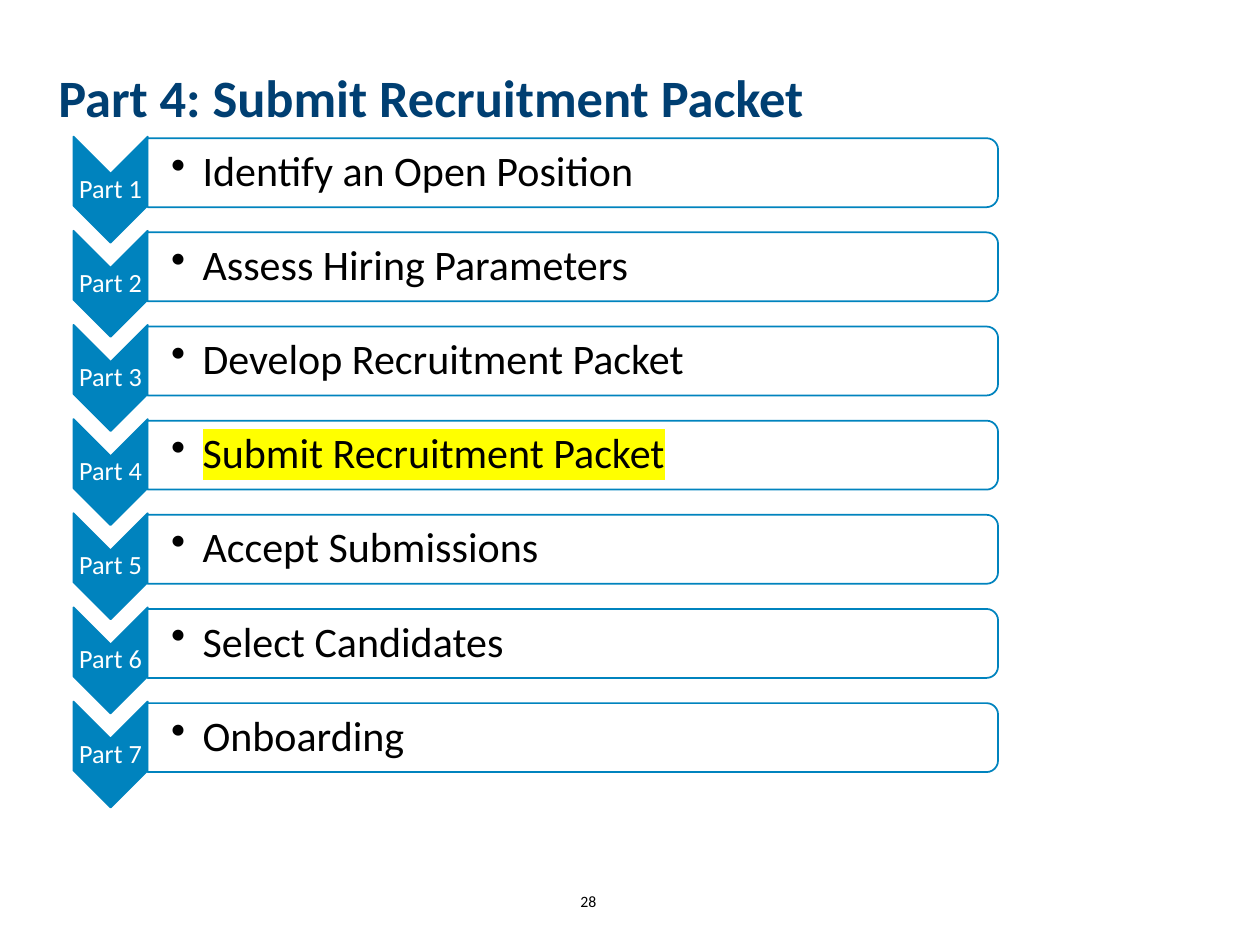
from dataclasses import dataclass

import pptx
import pptx.dml.color
import pptx.enum.shapes
import pptx.enum.text
import pptx.oxml.ns
import pptx.oxml.xmlchemy
import pptx.util
from lxml import etree

Pt = pptx.util.Pt
RGBColor = pptx.dml.color.RGBColor
Shapes = pptx.enum.shapes.MSO_SHAPE
Align = pptx.enum.text.PP_ALIGN
Anchor = pptx.enum.text.MSO_ANCHOR
qn = pptx.oxml.ns.qn


@dataclass(frozen=True)
class Theme:
    font: str = "Calibri"
    navy: str = "003F72"
    blue: str = "0083BE"
    white: str = "FFFFFF"
    black: str = "000000"
    highlight: str = "FFFF00"
    title_size: float = 30
    step_size: float = 24
    label_size: float = 15
    number_size: float = 9


class SlideBuilder:
    def __init__(self, slide, theme):
        self.slide = slide
        self.theme = theme

    def style_font(self, paragraph, size, color, bold=False):
        font = paragraph.font
        font.name = self.theme.font
        font.size = Pt(size)
        font.bold = bold
        font.color.rgb = RGBColor.from_string(color)

    def title(self, text, left, top, width, height):
        shape = self.slide.shapes.title
        shape.left, shape.top = Pt(left), Pt(top)
        shape.width, shape.height = Pt(width), Pt(height)
        frame = shape.text_frame
        frame.text = text
        frame.word_wrap = True
        frame.auto_size = pptx.enum.text.MSO_AUTO_SIZE.NONE
        frame.vertical_anchor = Anchor.MIDDLE
        paragraph = frame.paragraphs[0]
        paragraph.alignment = Align.LEFT
        paragraph.line_spacing = 0.9
        paragraph._p.get_or_add_pPr().set("marL", str(Pt(0.9)))
        self.style_font(paragraph, self.theme.title_size, self.theme.navy, True)

    def text(self, parent, text, left, top, width, height, size, color,
             inset=0.9, left_inset=0.9, align=Align.CENTER, spacing=0.9,
             bullet=False, highlighted=False):
        shape = parent.add_textbox(Pt(left), Pt(top), Pt(width), Pt(height))
        frame = shape.text_frame
        frame.word_wrap = True
        frame.vertical_anchor = Anchor.MIDDLE
        frame.margin_left = Pt(left_inset)
        frame.margin_top = frame.margin_right = frame.margin_bottom = Pt(inset)
        paragraph = frame.paragraphs[0]
        run = paragraph.add_run()
        run.text = text
        paragraph.alignment = align
        paragraph.line_spacing = spacing
        if bullet:
            paragraph.level = 1
            properties = paragraph._p.get_or_add_pPr()
            properties.set("marL", str(Pt(18)))
            properties.set("indent", str(-Pt(18)))
            etree.SubElement(properties, qn("a:buChar")).set("char", "•")
        if highlighted:
            mark = etree.SubElement(run._r.get_or_add_rPr(), qn("a:highlight"))
            etree.SubElement(mark, qn("a:srgbClr")).set("val", self.theme.highlight)
        self.style_font(paragraph, size, color)

    def turned_shape(self, parent, kind, center_x, center_y, length, breadth,
                     fill, opacity=100):
        shape = parent.add_shape(kind, Pt(center_x - length / 2),
                                 Pt(center_y - breadth / 2), Pt(length), Pt(breadth))
        shape.rotation = 90
        shape.shadow.inherit = False
        shape.fill.solid()
        shape.fill.fore_color.rgb = RGBColor.from_string(fill)
        shape.line.color.rgb = RGBColor.from_string(self.theme.blue)
        shape.line.width = Pt(1)
        if opacity < 100:
            color = shape._element.spPr.find(qn("a:solidFill")).find(qn("a:srgbClr"))
            etree.SubElement(color, qn("a:alpha")).set("val", str(opacity * 1000))

    def step(self, parent, label, text, center_y, highlighted):
        theme = self.theme
        chevron_y = center_y + 9.7
        self.turned_shape(parent, Shapes.CHEVRON, 63.2, chevron_y, 60.6, 42.4, theme.blue)
        self.text(parent, label, 42, chevron_y - 9, 42.4, 18,
                  theme.label_size, theme.white)
        self.turned_shape(parent, Shapes.ROUND_2_SAME_RECTANGLE, 327.3, center_y,
                          39.4, 486, theme.white, 90)
        self.text(parent, text, 84.3, center_y - 17.8, 484, 35.6,
                  theme.step_size, theme.black, inset=1.2, left_inset=13.5,
                  align=Align.LEFT, bullet=True, highlighted=highlighted)


def main():
    theme = Theme()
    presentation = pptx.Presentation()
    presentation.slide_width, presentation.slide_height = Pt(720), Pt(540)
    slide = presentation.slides.add_slide(presentation.slide_layouts[5])
    builder = SlideBuilder(slide, theme)

    builder.title("Part 4: Submit Recruitment Packet", 25.2, 26.6, 574, 61.2)
    builder.text(slide.shapes, "28", 316, 500.4, 40.4, 28.8, theme.number_size,
                 theme.black, inset=3.6, left_inset=3.6, spacing=1.0)

    steps = ["Identify an Open Position", "Assess Hiring Parameters",
             "Develop Recruitment Packet", "Submit Recruitment Packet",
             "Accept Submissions", "Select Candidates", "Onboarding"]
    current_part = 4
    first_center, pitch = 98.7, 53.8
    group = slide.shapes.add_group_shape()
    for number, text in enumerate(steps, start=1):
        builder.step(group.shapes, f"Part {number}", text,
                     first_center + (number - 1) * pitch, number == current_part)

    presentation.save("out.pptx")


if __name__ == "__main__":
    main()
